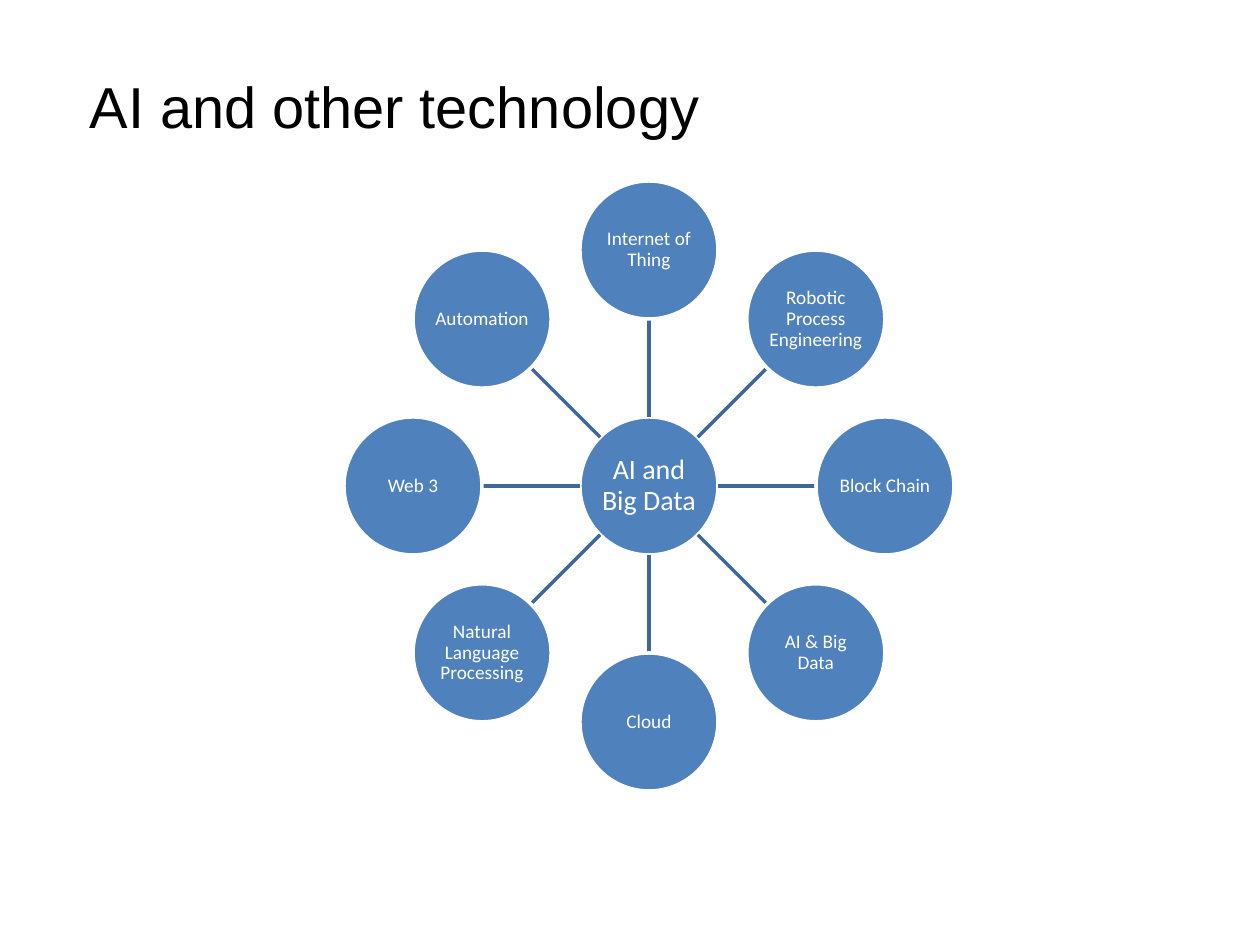
from dataclasses import dataclass
from math import cos, radians, sin

from lxml.etree import SubElement
from pptx import Presentation
from pptx.dml.color import RGBColor
from pptx.enum.shapes import MSO_CONNECTOR, MSO_SHAPE
from pptx.enum.text import MSO_ANCHOR, MSO_AUTO_SIZE, PP_ALIGN
from pptx.oxml.ns import qn
from pptx.util import Pt

SCALE = 914400 / 126
HUB = (649, 486)
RADIUS = 69
ORBIT = 236
# Clockwise from the top
TOPICS = [
    "Internet of Thing", "Robotic Process Engineering", "Block Chain",
    "AI & Big Data", "Cloud", "Natural Language Processing",
    "Web 3", "Automation",
]


@dataclass(frozen=True)
class Theme:
    ink: RGBColor = RGBColor(0, 0, 0)
    white: RGBColor = RGBColor(255, 255, 255)
    blue: RGBColor = RGBColor(0x4F, 0x81, 0xBD)
    spoke: RGBColor = RGBColor(0x3F, 0x67, 0x97)
    head: str = "Arial"
    body: str = "Calibri"
    title: int = 33
    hub: int = 16
    node: int = 11
    stroke: int = 2


THEME = Theme()


def px(num):
    return round(num * SCALE)


def style(par, face, size, color):
    for run in par.runs:
        run.font.name = face
        run.font.size = Pt(size)
        run.font.color.rgb = color


def polar(dist, angle):
    """Point at a distance from the hub, clockwise from the top."""
    turn = radians(angle)
    return HUB[0] + dist * sin(turn), HUB[1] - dist * cos(turn)


def add_title(slide, text):
    title = slide.shapes.title
    title.left, title.top = px(77), px(40)
    title.width, title.height = px(946), px(130)
    frame = title.text_frame
    frame.text = text
    frame.auto_size = MSO_AUTO_SIZE.NONE
    frame.vertical_anchor = MSO_ANCHOR.MIDDLE
    par = frame.paragraphs[0]
    par.alignment = PP_ALIGN.LEFT
    style(par, THEME.head, THEME.title, THEME.ink)


def add_spoke(slide, angle):
    ends = polar(RADIUS, angle) + polar(ORBIT - RADIUS, angle)
    line = slide.shapes.add_connector(MSO_CONNECTOR.STRAIGHT, *map(px, ends))
    line.line.color.rgb = THEME.spoke
    line.line.width = Pt(THEME.stroke)
    SubElement(line._element.spPr, qn("a:effectLst"))


def add_disc(slide, mid, text, size):
    left, top = (px(pos - RADIUS) for pos in mid)
    side = px(2 * RADIUS)
    disc = slide.shapes.add_shape(MSO_SHAPE.OVAL, left, top, side, side)
    disc.shadow.inherit = False
    disc.fill.solid()
    disc.fill.fore_color.rgb = THEME.blue
    disc.line.color.rgb = THEME.white
    disc.line.width = Pt(THEME.stroke)
    frame = disc.text_frame
    frame.text = text
    frame.word_wrap = True
    frame.vertical_anchor = MSO_ANCHOR.MIDDLE
    frame.margin_left = frame.margin_right = px(1)
    frame.margin_top = frame.margin_bottom = px(1)
    par = frame.paragraphs[0]
    par.alignment = PP_ALIGN.CENTER
    par.line_spacing = 0.9
    style(par, THEME.body, size, THEME.white)


def main():
    deck = Presentation()
    deck.slide_width, deck.slide_height = px(1260), px(945)
    slide = deck.slides.add_slide(deck.slide_layouts[5])
    add_title(slide, "AI and other technology")

    # Hub, then a spoke and a disc for each topic
    add_disc(slide, HUB, "AI and Big Data", THEME.hub)
    step = 360 / len(TOPICS)
    for num, topic in enumerate(TOPICS):
        add_spoke(slide, num * step)
        add_disc(slide, polar(ORBIT, num * step), topic, THEME.node)

    deck.save("out.pptx")


if __name__ == "__main__":
    main()
